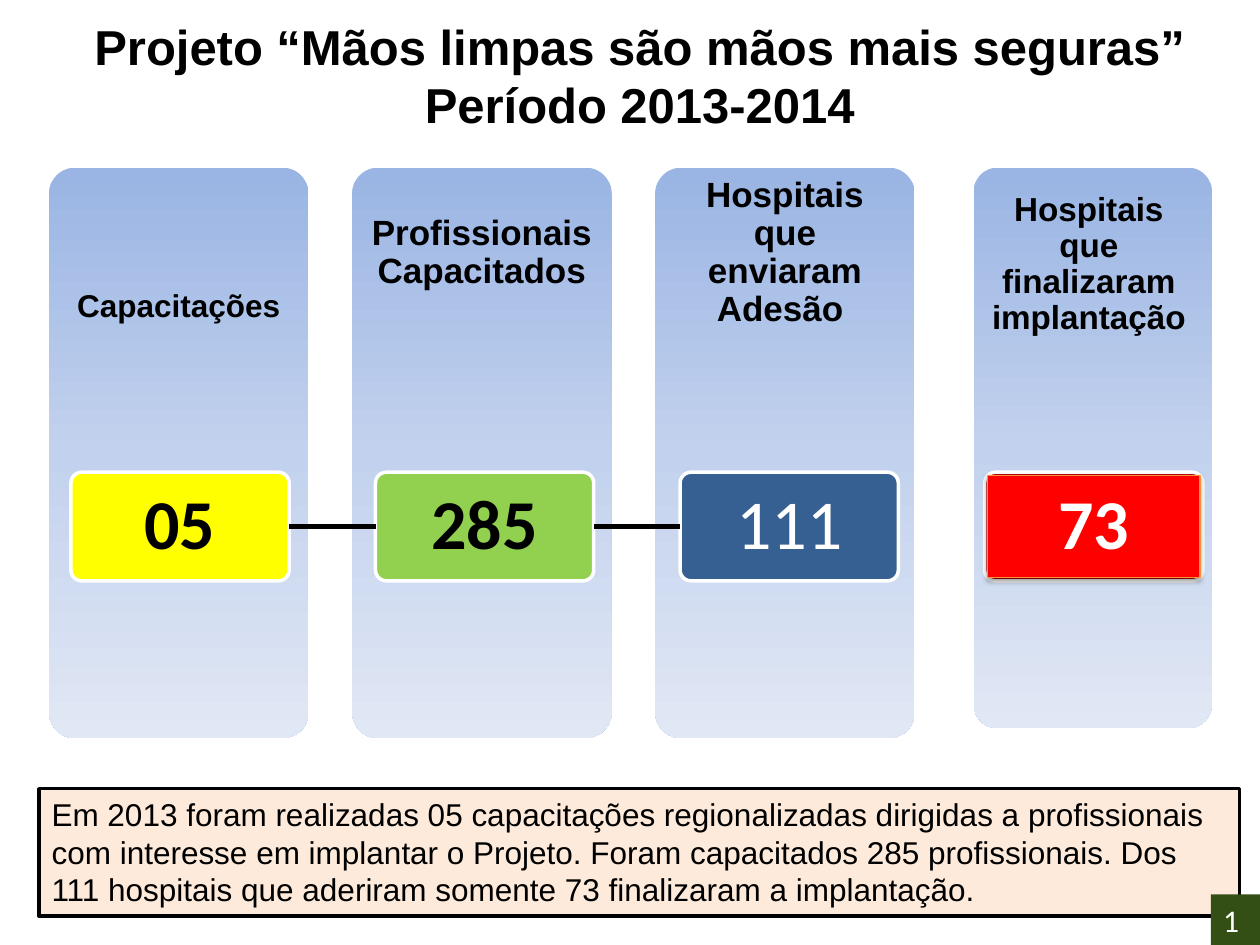
from copy import deepcopy
from itertools import pairwise

from lxml.etree import SubElement
from pptx import Presentation
from pptx.dml.color import RGBColor
from pptx.enum.shapes import MSO_CONNECTOR as Connector, MSO_SHAPE as Preset
from pptx.enum.text import MSO_ANCHOR as Anchor, PP_ALIGN as Align
from pptx.oxml.ns import qn
from pptx.util import Cm, Pt

THEME = {
    "heading_font": "Arial", "number_font": "Calibri",
    "title_size": 28, "body_size": 18, "number_size": 40,
    "ink": "000000", "paper": "FFFFFF",
    "panel": ["9AB5E4", "C2D1ED", "E1E8F5"],
    "yellow": "FFFF00", "green": "92D050", "blue": "376092",
    "dark_red": "C00000", "red": "FF0000", "red_edge": "F69240",
    "summary": "FDEADA", "page": "334F15",
}

TITLE = "Projeto “Mãos limpas são mãos mais seguras” Período 2013-2014"
SUMMARY = (
    "Em 2013 foram realizadas 05 capacitações regionalizadas dirigidas a "
    "profissionais com interesse em implantar o Projeto. Foram capacitados 285 "
    "profissionais. Dos 111 hospitais que aderiram somente 73 finalizaram a implantação."
)
PAGE = "1"

PANEL_TOP, PANEL_STEP = 3.38, 6.11
BADGE_LEFT, BADGE_TOP, BADGE_STEP = 1.43, 9.52, 6.14
BADGE_WIDTH, BADGE_HEIGHT, BADGE_EDGE = 4.4, 2.19, 0.06

STAGES = [
    {"caption": "Capacitações", "size": 18, "caption_box": (0.99, 4.47, 5.23, 3.45),
     "inset": 0.48, "number": "05", "color": "yellow", "ink": "ink", "bold": True},
    {"caption": "Profissionais Capacitados", "size": 20, "caption_box": (7.1, 3.38, 5.23, 3.45),
     "inset": 0.38, "number": "285", "color": "green", "ink": "ink", "bold": True},
    {"caption": "Hospitais que enviaram Adesão ", "size": 20, "caption_box": (13.21, 3.38, 5.23, 3.45),
     "inset": 0.38, "number": "111", "color": "blue", "ink": "paper", "bold": False},
]
FINAL = {"caption": "Hospitais que finalizaram implantação", "size": 19,
         "caption_box": (19.46, 3.58, 4.98, 3.51), "inset": 0.48, "number": "73"}


def rgb(name):
    return RGBColor.from_string(THEME.get(name, name))


def write(shape, text, size, font="heading_font", ink="ink", bold=False,
          align=Align.CENTER, anchor=Anchor.MIDDLE, inset=None, spacing=None):
    frame = shape.text_frame
    frame.word_wrap = True
    frame.vertical_anchor = anchor
    if inset is not None:
        frame.margin_left = frame.margin_right = Cm(inset)
        frame.margin_top = frame.margin_bottom = Cm(inset)
    paragraph = frame.paragraphs[0]
    paragraph.alignment = align
    if spacing:
        paragraph.line_spacing = spacing
    run = paragraph.add_run()
    run.text = text
    run.font.name, run.font.size, run.font.bold = THEME[font], Pt(size), bold
    run.font.color.rgb = rgb(ink)


def add_box(slide, box, fill=None, line=None, width=2, preset=Preset.RECTANGLE):
    shape = slide.shapes.add_shape(preset, *map(Cm, box))
    shape.shadow.inherit = False
    if preset == Preset.ROUNDED_RECTANGLE:
        shape.adjustments[0] = 0.1
    if fill:
        shape.fill.solid()
        shape.fill.fore_color.rgb = rgb(fill)
    if line:
        shape.line.color.rgb = rgb(line)
        shape.line.width = Pt(width)
    else:
        shape.line.fill.background()
    return shape


def add_panel(slide, box):
    panel = add_box(slide, box, preset=Preset.ROUNDED_RECTANGLE)
    panel.fill.gradient()
    panel.fill.gradient_angle = 270
    stops = panel.element.spPr.find(".//" + qn("a:gsLst"))
    stops.insert(1, deepcopy(stops[0]))
    for index, (stop, color) in enumerate(zip(panel.fill.gradient_stops, THEME["panel"])):
        stop.position = index / 2
        stop.color.rgb = rgb(color)


def add_caption(slide, stage):
    caption = slide.shapes.add_textbox(*map(Cm, stage["caption_box"]))
    write(caption, stage["caption"], stage["size"], bold=True,
          inset=stage["inset"], spacing=0.9)


def add_badge(slide, index, fill):
    box = (BADGE_LEFT + index * BADGE_STEP, BADGE_TOP, BADGE_WIDTH, BADGE_HEIGHT)
    return add_box(slide, box, fill, "paper", preset=Preset.ROUNDED_RECTANGLE)


def write_number(shape, number, ink, bold):
    write(shape, number, THEME["number_size"], "number_font", ink, bold,
          inset=0.08, spacing=0.9)


def add_shadow(shape):
    effects = shape.element.spPr.find(qn("a:effectLst"))
    shadow = SubElement(effects, qn("a:outerShdw"), blurRad=str(Pt(3.1)),
                        dist=str(Pt(1.6)), dir="5400000", rotWithShape="0")
    color = SubElement(shadow, qn("a:srgbClr"), val=THEME["ink"])
    SubElement(color, qn("a:alpha"), val="38000")


def join(slide, start, end):
    link = slide.shapes.add_connector(Connector.STRAIGHT, 0, 0, 0, 0)
    link.begin_connect(start, 3)
    link.end_connect(end, 1)
    link.line.color.rgb = rgb("ink")
    link.line.width = Pt(3)
    SubElement(link.element.spPr, qn("a:effectLst"))


def main():
    deck = Presentation()
    deck.slide_width, deck.slide_height = Cm(25.4), Cm(19.05)
    slide = deck.slides.add_slide(deck.slide_layouts[6])

    badges = []
    for index, stage in enumerate(STAGES):
        add_panel(slide, (0.99 + index * PANEL_STEP, PANEL_TOP, 5.23, 11.5))
        add_caption(slide, stage)
        badge = add_badge(slide, index, stage["color"])
        write_number(badge, stage["number"], stage["ink"], stage["bold"])
        badges.append(badge)
    for start, end in pairwise(badges):
        join(slide, start, end)

    add_panel(slide, (19.63, PANEL_TOP, 4.8, 11.3))
    add_caption(slide, FINAL)
    add_badge(slide, len(STAGES), "dark_red")
    final_left = BADGE_LEFT + len(STAGES) * BADGE_STEP
    result = add_box(slide, (final_left + BADGE_EDGE, BADGE_TOP + BADGE_EDGE,
                             BADGE_WIDTH - 2 * BADGE_EDGE, BADGE_HEIGHT - 2 * BADGE_EDGE),
                     "red", "red_edge", 0.75)
    add_shadow(result)
    write_number(result, FINAL["number"], "paper", True)

    title = slide.shapes.add_textbox(Cm(-0.2), Cm(0.2), Cm(26.19), Cm(2.64))
    write(title, TITLE, THEME["title_size"], bold=True, anchor=Anchor.TOP)
    summary = add_box(slide, (0.79, 15.9, 24.2, 2.57), "summary", "ink")
    write(summary, SUMMARY, THEME["body_size"], align=Align.LEFT, anchor=Anchor.TOP)
    page = add_box(slide, (24.41, 18.03, 0.99, 1.02), "page")
    write(page, PAGE, THEME["body_size"], "number_font", "paper",
          align=Align.LEFT, anchor=Anchor.TOP)

    deck.save("out.pptx")


if __name__ == "__main__":
    main()
